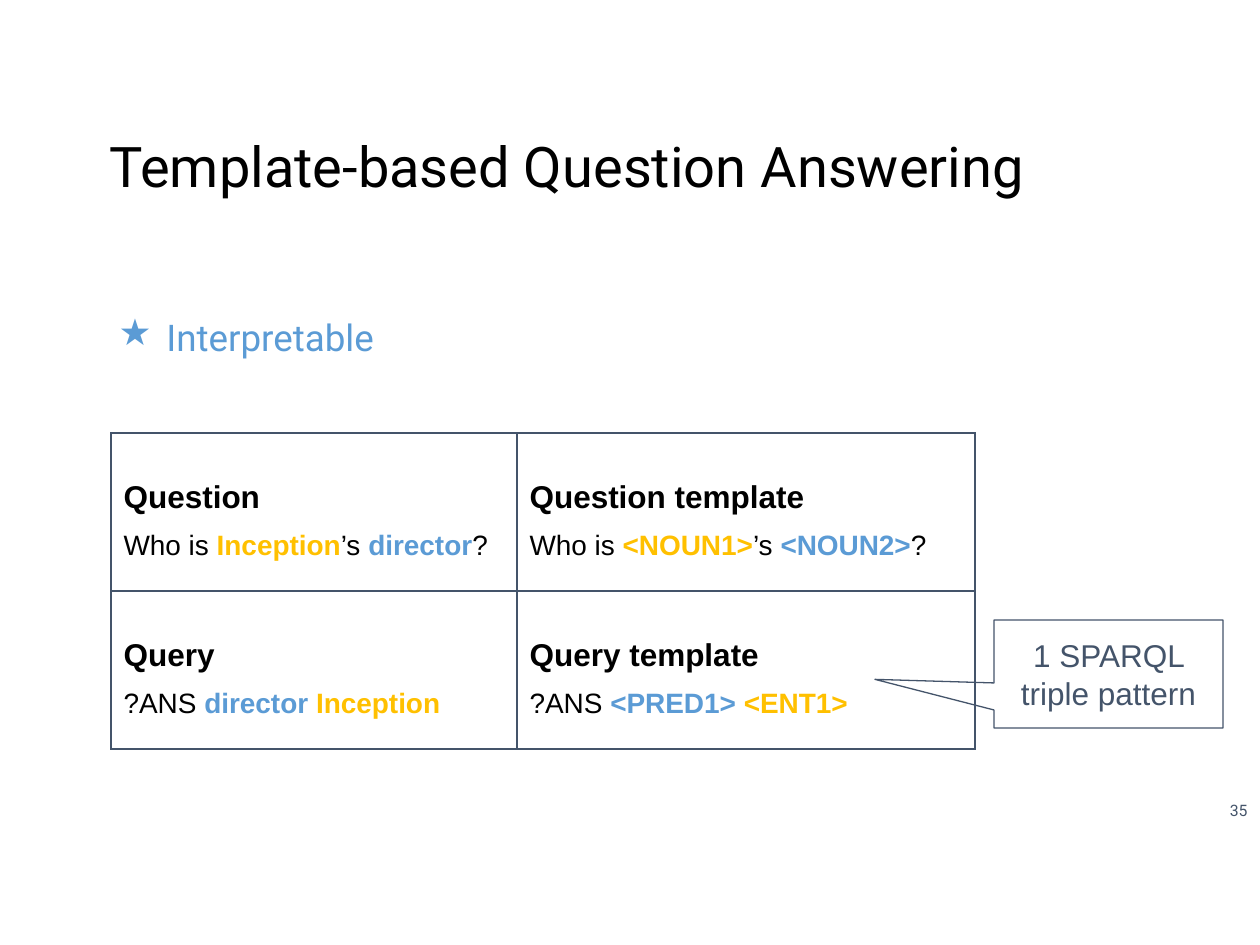
from dataclasses import dataclass

from lxml import etree
from pptx import Presentation
from pptx import util as u
from pptx.dml.color import RGBColor
from pptx.enum import shapes, text
from pptx.oxml import ns

PX = 914400 / 126  # EMU in one px

BLACK = RGBColor(0x00, 0x00, 0x00)
SLATE = RGBColor(0x44, 0x54, 0x6A)
BLUE = RGBColor(0x5B, 0x9B, 0xD5)
AMBER = RGBColor(0xFF, 0xC0, 0x00)


@dataclass(frozen=True)
class Box:
    left: int
    top: int
    width: int
    height: int

    def emu(self) -> list[u.Emu]:
        return [px(n) for n in (self.left, self.top, self.width, self.height)]


@dataclass(frozen=True)
class Entry:
    heading: str
    spans: list[tuple[str, RGBColor]]


ENTRIES = [
    [
        Entry("Question", [("Who is ", BLACK), ("Inception", AMBER), ("’s ", BLACK),
                           ("director", BLUE), ("?", BLACK)]),
        Entry("Question template", [("Who is ", BLACK), ("<NOUN1>", AMBER), ("’s ", BLACK),
                                    ("<NOUN2>", BLUE), ("?", BLACK)]),
    ],
    [
        Entry("Query", [("?ANS ", BLACK), ("director ", BLUE), ("Inception", AMBER)]),
        Entry("Query template", [("?ANS ", BLACK), ("<PRED1> ", BLUE), ("<ENT1>", AMBER)]),
    ],
]
COLUMN_WIDTHS = (406, 458)
ROW_HEIGHT = 158


def px(length: int) -> u.Emu:
    return u.Emu(round(length * PX))


def style(font, name: str, size: int, color: RGBColor, bold: bool = False) -> None:
    font.name, font.size, font.bold = name, u.Pt(size), bold
    font.color.rgb = color


def set_frame(frame, anchor) -> None:
    frame.word_wrap = True
    frame.auto_size = text.MSO_AUTO_SIZE.NONE
    frame.vertical_anchor = anchor
    frame.margin_left = frame.margin_top = u.Inches(0.1)
    frame.margin_right = frame.margin_bottom = u.Inches(0.1)


def write(shape, words: str, name: str, size: int, color: RGBColor, align, anchor):
    """Fill a shape with one paragraph and return that paragraph."""
    set_frame(shape.text_frame, anchor)
    para = shape.text_frame.paragraphs[0]
    para.text, para.alignment = words, align
    style(para.font, name, size, color)
    return para


def add_star_bullet(para, color: RGBColor) -> None:
    props = para._p.get_or_add_pPr()
    props.set("marL", str(u.Inches(0.5)))
    props.set("indent", str(u.Inches(-0.38)))
    bullet_color = etree.SubElement(props, ns.qn("a:buClr"))
    etree.SubElement(bullet_color, ns.qn("a:srgbClr"), val=str(color))
    etree.SubElement(props, ns.qn("a:buChar"), char="★")


def set_borders(cell, color: RGBColor) -> None:
    props = cell._tc.get_or_add_tcPr()
    for index, side in enumerate(("lnL", "lnR", "lnT", "lnB")):
        line = etree.Element(ns.qn(f"a:{side}"), w=str(u.Pt(0.75)))
        fill = etree.SubElement(line, ns.qn("a:solidFill"))
        etree.SubElement(fill, ns.qn("a:srgbClr"), val=str(color))
        props.insert(index, line)


def fill_cell(cell, entry: Entry) -> None:
    cell.fill.background()
    set_borders(cell, SLATE)
    cell.vertical_anchor = text.MSO_ANCHOR.MIDDLE
    cell.margin_left = u.Inches(0.1)
    cell.margin_top = cell.margin_right = cell.margin_bottom = 0
    heading = cell.text_frame.paragraphs[0]
    heading.text, heading.line_spacing = entry.heading, 1.5
    style(heading.font, "Arial", 18, BLACK, bold=True)
    example = cell.text_frame.add_paragraph()
    example.line_spacing = 1.5
    for words, color in entry.spans:
        span = example.add_run()
        span.text = words
        style(span.font, "Arial", 16, color, bold=color != BLACK)


def add_entry_table(page, left: int, top: int) -> None:
    area = Box(left, top, sum(COLUMN_WIDTHS), ROW_HEIGHT * len(ENTRIES))
    table = page.shapes.add_table(len(ENTRIES), len(COLUMN_WIDTHS), *area.emu()).table
    table.first_row = table.horz_banding = False
    for column, width in zip(table.columns, COLUMN_WIDTHS):
        column.width = px(width)
    for row, entries in zip(table.rows, ENTRIES):
        row.height = px(ROW_HEIGHT)
        for cell, entry in zip(row.cells, entries):
            fill_cell(cell, entry)


def add_callout(page, area: Box, words: str) -> None:
    callout = page.shapes.add_shape(
        shapes.MSO_SHAPE.ROUNDED_RECTANGULAR_CALLOUT, *area.emu())
    callout.shadow.inherit = False
    callout.fill.background()
    callout.line.color.rgb = SLATE
    callout.line.width = u.Pt(0.75)
    for index, value in enumerate((-1.02, 0.05, 0)):
        callout.adjustments[index] = value
    write(callout, words, "Arial", 18, SLATE, text.PP_ALIGN.CENTER, text.MSO_ANCHOR.MIDDLE)


def main() -> None:
    deck = Presentation()
    deck.slide_width, deck.slide_height = u.Inches(10), u.Inches(7.5)
    page = deck.slides.add_slide(deck.slide_layouts.get_by_name("Title Only"))
    left, right = text.PP_ALIGN.LEFT, text.PP_ALIGN.RIGHT
    top, middle = text.MSO_ANCHOR.TOP, text.MSO_ANCHOR.MIDDLE

    # Title
    title = page.shapes.title
    title.left, title.top, title.width, title.height = Box(97, 126, 1099, 79).emu()
    para = write(title, "Template-based Question Answering", "Roboto", 32, BLACK, left, top)
    para.line_spacing = 0.9

    # Starred point
    point = page.shapes.add_textbox(*Box(91, 280, 1076, 149).emu())
    para = write(point, "Interpretable", "Roboto", 21, BLUE, left, top)
    para.line_spacing = 1.5
    add_star_bullet(para, BLUE)

    # Questions and queries beside their templates
    add_entry_table(page, 111, 433)
    add_callout(page, Box(994, 620, 229, 108), "1 SPARQL triple pattern")

    # Page number
    number = page.shapes.add_textbox(*Box(1207, 794, 53, 33).emu())
    write(number, "35", "Roboto", 9, SLATE, right, middle)

    deck.save("out.pptx")


if __name__ == "__main__":
    main()
